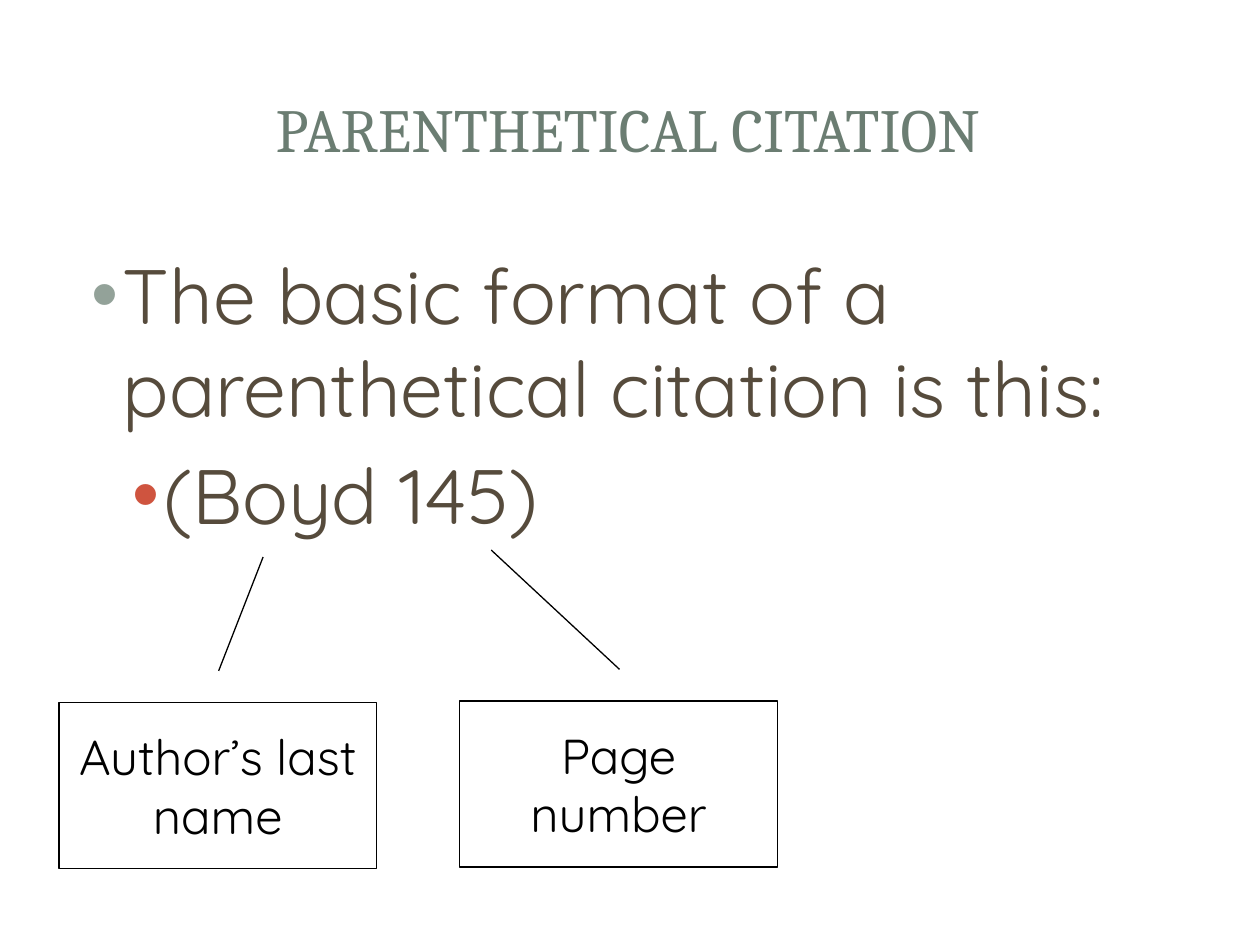
from dataclasses import dataclass

from lxml import etree
from pptx import Presentation
from pptx import util as u
from pptx.dml.color import RGBColor
from pptx.enum import shapes, text
from pptx.oxml.ns import qn

COLORS = {
    "panel": "FFFFFF",
    "title": "6B7D72",
    "body": "564B3C",
    "bullet": "93A299",
    "sub_bullet": "CF543F",
    "black": "000000",
}
BODY_FONT = "Quicksand"


@dataclass
class Panel:
    box: tuple[float, float, float, float]  # cm
    corner: float = 0
    opacity: int = 100  # percent


@dataclass
class Bullet:
    label: str
    level: int
    indent: float  # cm
    color: str


@dataclass
class Callout:
    label: str
    left: float  # cm
    top: float
    tip: tuple[float, float]  # line end as (y, x) shares of the box


PANELS = [
    Panel((0.25, 0.28, 24.89, 18.52), corner=0.017),
    Panel((0.76, 0.76, 23.88, 3.68), opacity=83),
    Panel((1.04, 1.04, 23.29, 3.1)),
]
BULLETS = [
    Bullet("The basic format of a parenthetical citation is this:", 0, 0.96, "bullet"),
    Bullet("(Boyd 145)", 1, 1.78, "sub_bullet"),
]
CALLOUTS = [
    Callout("Author’s last name", 1.19, 14.16, (-0.875, 0.643)),
    Callout("Page number", 9.27, 14.13, (-0.908, 0.099)),
]


def rgb(name: str) -> RGBColor:
    return RGBColor.from_string(COLORS[name])


def set_font(p, name: str, size: float, color: str) -> None:
    p.font.name = name
    p.font.size = u.Pt(size)
    p.font.color.rgb = rgb(color)


def draw_panel(s, item: Panel) -> None:
    kind = shapes.MSO_SHAPE.ROUNDED_RECTANGLE if item.corner else shapes.MSO_SHAPE.RECTANGLE
    sp = s.shapes.add_shape(kind, *map(u.Cm, item.box))
    sp.shadow.inherit = False
    if item.corner:
        sp.adjustments[0] = item.corner
    sp.fill.solid()
    sp.fill.fore_color.rgb = rgb("panel")
    sp.line.fill.background()
    if item.opacity < 100:
        color = sp._element.spPr.find(".//" + qn("a:srgbClr"))
        etree.SubElement(color, qn("a:alpha"), val=str(item.opacity * 1000))


def add_box(s, left: float, top: float, width: float, height: float):
    tf = s.shapes.add_textbox(*map(u.Cm, (left, top, width, height))).text_frame
    tf.word_wrap = True
    return tf


def write_bullet(p, item: Bullet) -> None:
    p.text = item.label
    p.level = item.level
    p.space_before = u.Pt(8.8)
    set_font(p, BODY_FONT, 44, "body")
    pPr = p._p.get_or_add_pPr()
    pPr.set("marL", str(u.Cm(item.indent)))
    pPr.set("indent", str(u.Cm(-0.63)))
    # Bullet colour, font and sign go before the default run properties
    color = etree.Element(qn("a:buClr"))
    etree.SubElement(color, qn("a:srgbClr"), val=COLORS[item.color])
    font = etree.Element(qn("a:buFont"), typeface="Arial")
    sign = etree.Element(qn("a:buChar"), char="•")
    for part in (color, font, sign):
        pPr.find(qn("a:defRPr")).addprevious(part)


def draw_callout(s, item: Callout) -> None:
    sp = s.shapes.add_shape(
        shapes.MSO_SHAPE.LINE_CALLOUT_1,
        u.Cm(item.left), u.Cm(item.top), u.Cm(6.4), u.Cm(3.35),
    )
    sp.shadow.inherit = False
    for i, value in enumerate((-0.19, 0.503, *item.tip)):
        sp.adjustments[i] = value
    sp.fill.background()
    sp.line.color.rgb = rgb("black")
    sp.line.width = u.Pt(0.75)
    tf = sp.text_frame
    tf.word_wrap = True
    tf.vertical_anchor = text.MSO_ANCHOR.MIDDLE
    p = tf.paragraphs[0]
    p.text = item.label
    p.alignment = text.PP_ALIGN.CENTER
    set_font(p, BODY_FONT, 28, "black")


def main() -> None:
    prs = Presentation()
    prs.slide_width, prs.slide_height = u.Cm(25.4), u.Cm(19.05)
    s = prs.slides.add_slide(prs.slide_layouts[6])

    # Background panels
    for item in PANELS:
        draw_panel(s, item)

    # Title
    tf = add_box(s, 1.19, 1.14, 22.94, 2.9)
    tf.vertical_anchor = text.MSO_ANCHOR.MIDDLE
    p = tf.paragraphs[0]
    p.text = "PARENTHETICAL CITATION"
    p.alignment = text.PP_ALIGN.CENTER
    set_font(p, "Cambria", 35, "title")

    # Bulleted body
    tf = add_box(s, 1.27, 4.87, 22.86, 12.14)
    for i, item in enumerate(BULLETS):
        write_bullet(tf.add_paragraph() if i else tf.paragraphs[0], item)

    # Callouts pointing at the parts of the citation
    for item in CALLOUTS:
        draw_callout(s, item)

    prs.save("out.pptx")


if __name__ == "__main__":
    main()
